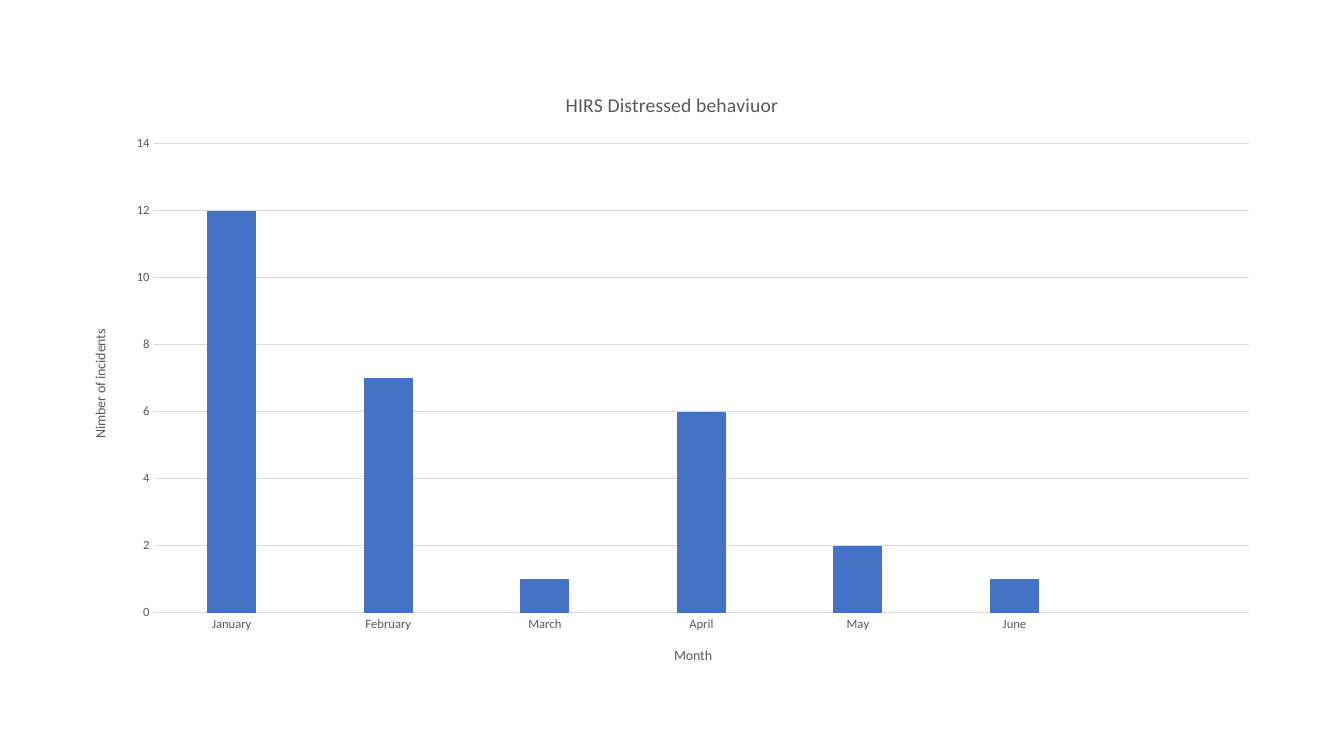
from pptx import Presentation
from pptx.chart.data import CategoryChartData
from pptx.dml.color import RGBColor
from pptx.enum.chart import XL_CHART_TYPE, XL_TICK_MARK
from pptx.util import Inches, Pt

BLUE = RGBColor(0x44, 0x72, 0xC4)
GRAY = RGBColor(0x59, 0x59, 0x59)
RULE = RGBColor(0xD9, 0xD9, 0xD9)
FACE = "Calibri"

COUNTS = {"January": 12, "February": 7, "March": 1, "April": 6,
          "May": 2, "June": 1, "": None}


def style(font, size, color=GRAY):
    font.name = FACE
    font.size = Pt(size)
    font.bold = False
    font.color.rgb = color


def put_text(title, text, size=10, color=GRAY):
    frame = title.text_frame
    frame.text = text
    style(frame.paragraphs[0].runs[0].font, size, color)


def draw_rule(line):
    line.color.rgb = RULE
    line.width = Pt(0.75)


def set_axis(axis, label):
    axis.has_title = True
    put_text(axis.axis_title, label)
    axis.major_tick_mark = XL_TICK_MARK.NONE
    axis.minor_tick_mark = XL_TICK_MARK.NONE
    style(axis.tick_labels.font, 9)


def add_counts(slide, left, top, width, height):
    data = CategoryChartData()
    data.categories = list(COUNTS)
    data.add_series("Series 1", list(COUNTS.values()))
    chart = slide.shapes.add_chart(
        XL_CHART_TYPE.COLUMN_CLUSTERED, Inches(left), Inches(top),
        Inches(width), Inches(height), data).chart
    style(chart.font, 10)
    chart.has_legend = False
    chart.has_title = True
    put_text(chart.chart_title, "HIRS Distressed behaviuor", size=14)
    chart.chart_title.include_in_layout = False

    months, count = chart.category_axis, chart.value_axis
    set_axis(months, "Month")
    draw_rule(months.format.line)
    set_axis(count, "Nimber of incidents")
    count.minimum_scale, count.maximum_scale, count.major_unit = 0, 14, 2
    count.format.line.fill.background()
    count.has_major_gridlines = True
    draw_rule(count.major_gridlines.format.line)

    plot = chart.plots[0]
    plot.vary_by_categories = False
    plot.gap_width, plot.overlap = 219, -27
    fill = plot.series[0].format.fill
    fill.solid()
    fill.fore_color.rgb = BLUE


def main():
    deck = Presentation()
    deck.slide_width, deck.slide_height = Inches(13.33), Inches(7.5)
    slide = deck.slides.add_slide(deck.slide_layouts[6])
    add_counts(slide, 0.7, 0.7, 11.93, 6.09)
    deck.save("out.pptx")


if __name__ == "__main__":
    main()
